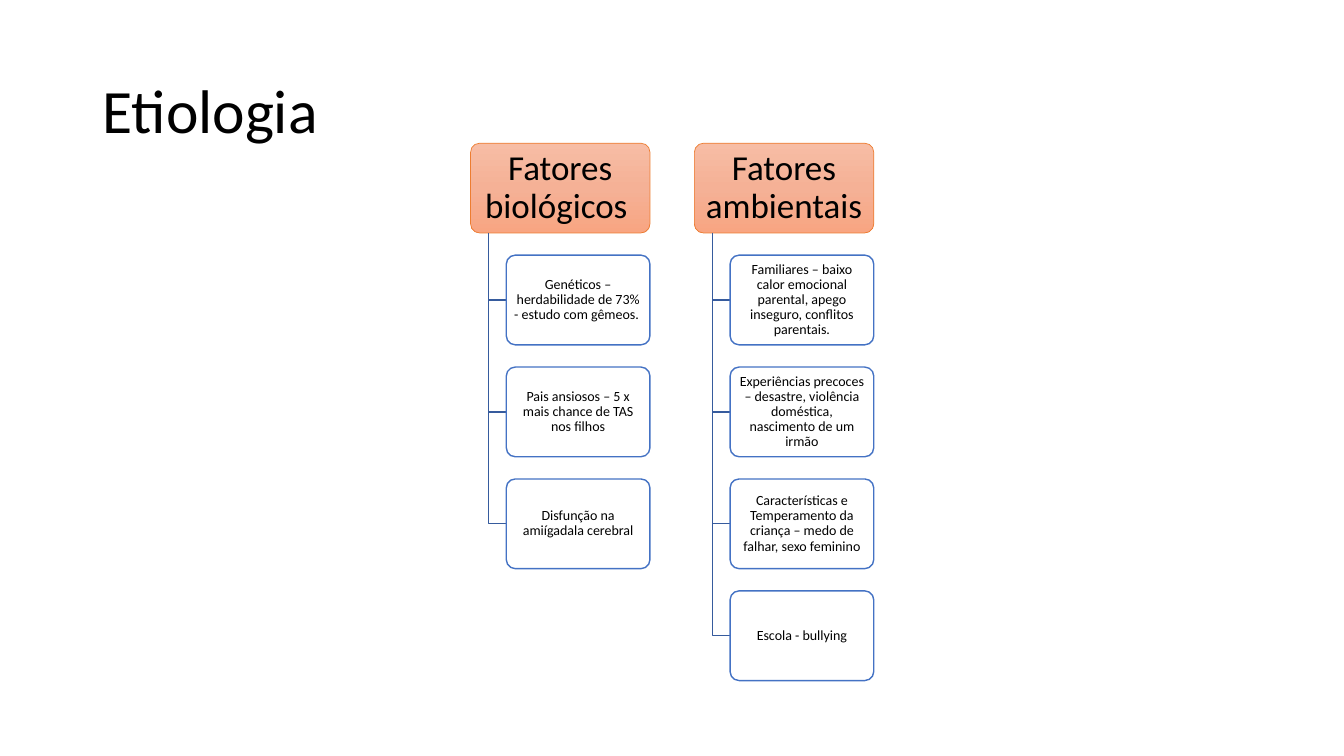
import copy
from dataclasses import dataclass

import pptx
import pptx.dml.color
import pptx.dml.fill
import pptx.enum.shapes
import pptx.enum.text
import pptx.oxml
import pptx.oxml.ns
import pptx.shapes.autoshape
import pptx.shapes.shapetree
import pptx.text.text
import pptx.util
from pptx.util import Cm

COLORS = {
    "text": "000000",
    "leaf": "FFFFFF",
    "edge": "4472C4",
    "branch": "365B9D",
    "rim": "ED7D31",
    "top": "F7BDA5",
    "middle": "F5B196",
    "bottom": "F8A582",
}
FONT = "Calibri"

LEFT, TOP = 11.86, 3.61      # first heading
WIDTH, HEIGHT = 4.52, 2.26   # heading size
PITCH = 5.64                 # from one column to the next
STEP = 2.82                  # from one row to the next
STEM, INDENT = 0.45, 0.9     # branch and leaf offsets in a column


@dataclass(frozen=True)
class Column:
    head: str
    leaves: tuple[str, ...]


COLUMNS = (
    Column("Fatores biológicos ", (
        "Genéticos – herdabilidade de 73% - estudo com gêmeos. ",
        "Pais ansiosos – 5 x mais chance de TAS nos filhos",
        "Disfunção na amiígadala cerebral",
    )),
    Column("Fatores ambientais", (
        "Familiares – baixo calor emocional parental, apego inseguro, conflitos parentais.",
        "Experiências precoces – desastre, violência doméstica, nascimento de um irmão",
        "Características e Temperamento da criança – medo de falhar, sexo feminino",
        "Escola - bullying",
    )),
)

Shapes = pptx.shapes.shapetree.SlideShapes
Shape = pptx.shapes.autoshape.Shape


def color(name: str) -> pptx.dml.color.RGBColor:
    return pptx.dml.color.RGBColor.from_string(COLORS[name])


def write(shape: Shape, text: str, size: float, align: pptx.enum.text.PP_ALIGN,
          side: float, edge: float) -> None:
    """Set the text, with side and edge as the insets in cm."""
    frame = shape.text_frame
    frame.word_wrap = True
    frame.vertical_anchor = pptx.enum.text.MSO_ANCHOR.MIDDLE
    frame.margin_left = frame.margin_right = Cm(side)
    frame.margin_top = frame.margin_bottom = Cm(edge)
    para = frame.paragraphs[0]
    para.text = text
    para.alignment = align
    para.line_spacing = 0.9
    para.font.name = FONT
    para.font.size = pptx.util.Pt(size)
    para.font.color.rgb = color("text")


def outline(shape: Shape, name: str, width: float) -> None:
    shape.shadow.inherit = False
    shape.line.color.rgb = color(name)
    shape.line.width = pptx.util.Pt(width)


def add_box(shapes: Shapes, x: float, y: float, width: float) -> Shape:
    box = shapes.add_shape(pptx.enum.shapes.MSO_SHAPE.ROUNDED_RECTANGLE,
                           Cm(x), Cm(y), Cm(width), Cm(HEIGHT))
    box.adjustments[0] = 0.1
    return box


def add_head(shapes: Shapes, x: float, text: str) -> None:
    box = add_box(shapes, x, TOP, WIDTH)
    outline(box, "rim", 0.5)
    box.fill.gradient()
    box.fill.gradient_angle = 270
    stops = box._element.spPr.find(".//" + pptx.oxml.ns.qn("a:gsLst"))
    stops.insert(1, copy.deepcopy(stops[0]))
    tints = zip(box.fill.gradient_stops, (0, 0.5, 1), ("top", "middle", "bottom"))
    for stop, place, name in tints:
        stop.position = place
        stop.color.rgb = color(name)
    write(box, text, 25, pptx.enum.text.PP_ALIGN.CENTER, 0.19, 0.14)


def add_leaf(shapes: Shapes, x: float, y: float, text: str) -> None:
    box = add_box(shapes, x, y, WIDTH - INDENT)
    outline(box, "edge", 1)
    box.fill.solid()
    box.fill.fore_color.rgb = color("leaf")
    tint = box._element.spPr.find(".//" + pptx.oxml.ns.qn("a:srgbClr"))
    alpha = pptx.oxml.parse_xml(
        f'<a:alpha {pptx.oxml.ns.nsdecls("a")} val="90000"/>')
    tint.append(alpha)
    write(box, text, 10, pptx.enum.text.PP_ALIGN.CENTER, 0.12, 0.1)


def add_branch(shapes: Shapes, x: float, y: float) -> None:
    """Draw an elbow from the heading at x to the middle of the leaf at y."""
    stem, mid = Cm(x + STEM), Cm(y + HEIGHT / 2)
    path_maker = shapes.build_freeform(stem, Cm(TOP + HEIGHT))
    path_maker.add_line_segments([(stem, mid), (Cm(x + INDENT), mid)], close=False)
    elbow = path_maker.convert_to_shape()
    elbow.fill.background()
    outline(elbow, "branch", 1)


def add_column(shapes: Shapes, x: float, column: Column) -> None:
    add_head(shapes, x, column.head)
    for row, text in enumerate(column.leaves, start=1):
        y = TOP + row * STEP
        add_branch(shapes, x, y)
        add_leaf(shapes, x + INDENT, y, text)


def main() -> None:
    deck = pptx.Presentation()
    deck.slide_width, deck.slide_height = Cm(33.87), Cm(19.05)
    shapes = deck.slides.add_slide(deck.slide_layouts[6]).shapes
    title = shapes.add_textbox(Cm(2.33), Cm(1.01), Cm(29.21), Cm(3.68))
    write(title, "Etiologia", 44, pptx.enum.text.PP_ALIGN.LEFT, 0.25, 0.13)
    for index, column in enumerate(COLUMNS):
        add_column(shapes, LEFT + index * PITCH, column)
    deck.save("out.pptx")


if __name__ == "__main__":
    main()
